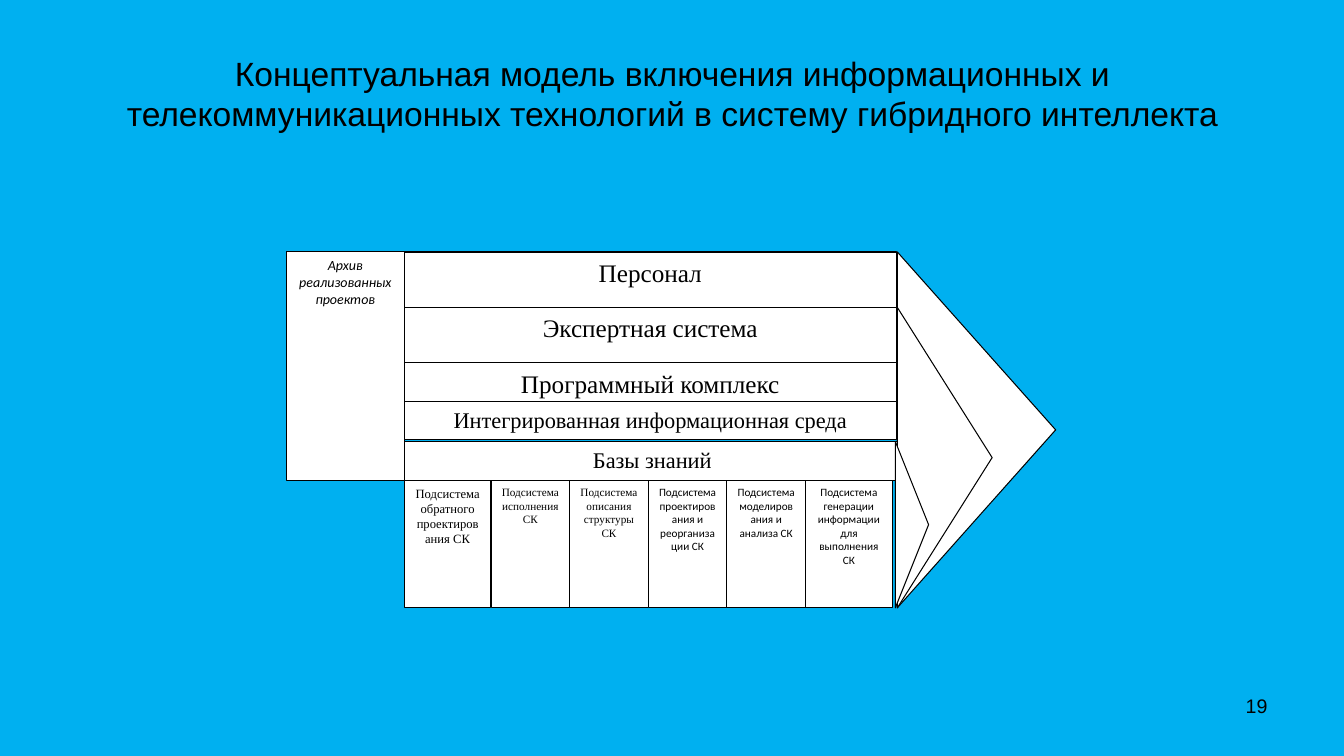
from itertools import accumulate

from pptx import Presentation
from pptx.dml.color import RGBColor
from pptx.enum.shapes import MSO_SHAPE
from pptx.enum.text import MSO_ANCHOR, PP_ALIGN
from pptx.util import Inches, Pt

RECT, TRIANGLE = MSO_SHAPE.RECTANGLE, MSO_SHAPE.ISOSCELES_TRIANGLE
CENTER, RIGHT = PP_ALIGN.CENTER, PP_ALIGN.RIGHT
TOP, MIDDLE = MSO_ANCHOR.TOP, MSO_ANCHOR.MIDDLE
SERIF, SANS = "Times New Roman", "Calibri"

TITLE = ("Концептуальная модель включения информационных и "
         "телекоммуникационных технологий в систему гибридного интеллекта")
PAGE = "19"
ARCHIVE = "Архив реализованных проектов"
# text, top, height, width, theme size
LAYERS = [
    ("Персонал", 2.5, 0.55, 4.88, "layer"),
    ("Экспертная система", 3.05, 0.55, 4.88, "layer"),
    ("Программный комплекс", 3.6, 0.38, 4.88, "layer"),
    ("Интегрированная информационная среда", 3.98, 0.38, 4.88, "base"),
    ("Базы знаний", 4.38, 0.39, 4.92, "base"),
]
# text, column width, font, theme size
SUBSYSTEMS = [
    ("Подсистема обратного проектирования СК", 0.86, SERIF, "first"),
    ("Подсистема исполнения СК", 0.78, SERIF, "subsystem"),
    ("Подсистема описания структуры СК", 0.78, SERIF, "subsystem"),
    ("Подсистема проектирования и реорганизации СК", 0.78, SANS, "subsystem"),
    ("Подсистема моделирования и анализа СК", 0.78, SANS, "subsystem"),
    ("Подсистема генерации информации для выполнения СК", 0.86, SANS, "subsystem"),
]
# left, top, depth of each arrow point, outermost first
POINTS = [(8.9, 2.5, 1.57), (8.9, 3.05, 0.94), (8.88, 4.38, 0.33)]

ARCHIVE_LEFT, MODEL_LEFT = 2.84, 4.01
MODEL_TOP, SUBSYSTEM_TOP, MODEL_BOTTOM = 2.5, 4.77, 6.03

THEME = {
    "bg": RGBColor(0x00, 0xB0, 0xF0),
    "fill": RGBColor(0xFF, 0xFF, 0xFF),
    "ink": RGBColor(0x00, 0x00, 0x00),
    "line": 0.75,
    "font": "Arial",
    "title": 24, "page": 14, "layer": 18, "base": 16,
    "archive": 10, "first": 9, "subsystem": 8,
}


def write(sp, text, size, font=THEME["font"], align=CENTER, anchor=TOP,
          italic=False, after=0):
    tf = sp.text_frame
    tf.word_wrap = True
    tf.vertical_anchor = anchor
    p = tf.paragraphs[0]
    p.alignment = align
    p.space_after = Pt(after)
    r = p.add_run()
    r.text = text
    r.font.size = Pt(THEME[size])
    r.font.name = font
    r.font.italic = italic
    r.font.color.rgb = THEME["ink"]


def add_outlined(s, kind, left, top, width, height):
    sp = s.shapes.add_shape(kind, *map(Inches, (left, top, width, height)))
    sp.shadow.inherit = False
    sp.fill.solid()
    sp.fill.fore_color.rgb = THEME["fill"]
    sp.line.color.rgb = THEME["ink"]
    sp.line.width = Pt(THEME["line"])
    return sp


def add_box(s, text, left, top, width, height, size, font=SERIF, italic=False):
    sp = add_outlined(s, RECT, left, top, width, height)
    write(sp, text, size, font=font, italic=italic, after=10)


def add_point(s, left, top, depth):
    """Add a triangle pointing right whose base runs from top to the model's bottom."""
    base = MODEL_BOTTOM - top
    shift = (base - depth) / 2
    sp = add_outlined(s, TRIANGLE, left - shift, top + shift, base, depth)
    sp.rotation = 90


def main():
    prs = Presentation()
    prs.slide_width, prs.slide_height = Inches(13.33), Inches(7.5)
    s = prs.slides.add_slide(prs.slide_layouts[5])
    s.background.fill.solid()
    s.background.fill.fore_color.rgb = THEME["bg"]

    title = s.shapes.title
    title.left, title.top = Inches(0.67), Inches(0.3)
    title.width, title.height = Inches(12), Inches(1.25)
    write(title, TITLE, "title", anchor=MIDDLE)
    page = s.shapes.add_textbox(*map(Inches, (9.56, 6.83, 3.11, 0.52)))
    write(page, PAGE, "page", align=RIGHT)

    outer, *inner = POINTS
    add_point(s, *outer)
    add_box(s, ARCHIVE, ARCHIVE_LEFT, MODEL_TOP, MODEL_LEFT - ARCHIVE_LEFT,
            SUBSYSTEM_TOP - MODEL_TOP, "archive", font=SANS, italic=True)
    for text, top, height, width, size in LAYERS:
        add_box(s, text, MODEL_LEFT, top, width, height, size)
    lefts = accumulate((width for _, width, _, _ in SUBSYSTEMS), initial=MODEL_LEFT)
    for left, (text, width, font, size) in zip(lefts, SUBSYSTEMS):
        add_box(s, text, left, SUBSYSTEM_TOP, width,
                MODEL_BOTTOM - SUBSYSTEM_TOP, size, font=font)
    for point in inner:
        add_point(s, *point)

    prs.save("out.pptx")


if __name__ == "__main__":
    main()
